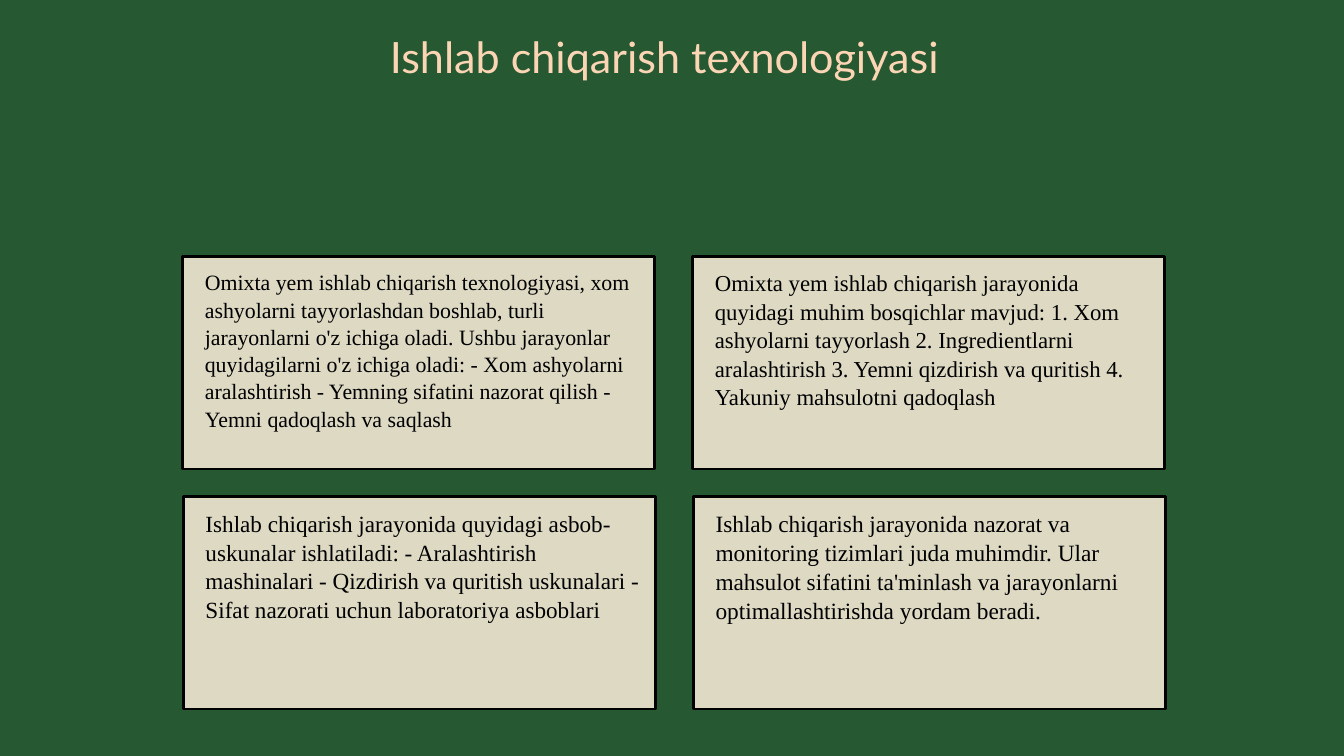
from pptx import Presentation
from pptx.dml.color import RGBColor
from pptx.enum.shapes import MSO_SHAPE
from pptx.enum.text import MSO_ANCHOR, PP_ALIGN
from pptx.util import Inches, Pt

RECTANGLE = MSO_SHAPE.RECTANGLE
TOP = MSO_ANCHOR.TOP
LEFT, CENTER = PP_ALIGN.LEFT, PP_ALIGN.CENTER

COLORS = {
    "background": "265832",
    "title": "FCD5B5",
    "card": "DDD9C3",
    "ink": "000000",
}
SLIDE_W, SLIDE_H = 20, 11.25
TITLE_BOX = (0.83, 0.4, 18, 2.19)
CARDS_BOX = (2.72, 3.82, 14.61, 6.73)
CARD_W, CARD_H = 7.02, 3.16
CARD_INSET = 0.12
TEXT_W, TEXT_H = 6.77, 2.87
ROW_SHIFT = 0.01
INDENT = 0.11

TITLE = "Ishlab chiqarish texnologiyasi"
CARDS = [
    [
        ("Omixta yem ishlab chiqarish texnologiyasi, xom ashyolarni tayyorlashdan "
         "boshlab, turli jarayonlarni o'z ichiga oladi. Ushbu jarayonlar "
         "quyidagilarni o'z ichiga oladi: - Xom ashyolarni aralashtirish - Yemning "
         "sifatini nazorat qilish - Yemni qadoqlash va saqlash", 23.4),
        ("Omixta yem ishlab chiqarish jarayonida quyidagi muhim bosqichlar mavjud: "
         "1. Xom ashyolarni tayyorlash 2. Ingredientlarni aralashtirish 3. Yemni "
         "qizdirish va quritish 4. Yakuniy mahsulotni qadoqlash", 24.4),
    ],
    [
        ("Ishlab chiqarish jarayonida quyidagi asbob-uskunalar ishlatiladi: "
         "- Aralashtirish mashinalari - Qizdirish va quritish uskunalari - Sifat "
         "nazorati uchun laboratoriya asboblari", 24.8),
        ("Ishlab chiqarish jarayonida nazorat va monitoring tizimlari juda "
         "muhimdir. Ular mahsulot sifatini ta'minlash va jarayonlarni "
         "optimallashtirishda yordam beradi.", 25),
    ],
]


def color(name):
    return RGBColor.from_string(COLORS[name])


def write(frame, text, font_name, size, ink, align, line_spacing):
    frame.word_wrap = True
    frame.vertical_anchor = TOP
    frame.text = text
    paragraph = frame.paragraphs[0]
    paragraph.alignment = align
    paragraph.line_spacing = line_spacing
    properties = paragraph._p.get_or_add_pPr()
    properties.set("marL", str(Inches(INDENT)))
    properties.set("indent", "0")
    font = paragraph.runs[0].font
    font.name = font_name
    font.size = Pt(size)
    font.color.rgb = color(ink)


def add_panel(slide, box, border=0):
    panel = slide.shapes.add_shape(RECTANGLE, *map(Inches, box))
    panel.shadow.inherit = False
    panel.fill.solid()
    panel.fill.fore_color.rgb = color("card")
    if border:
        panel.line.color.rgb = color("ink")
        panel.line.width = Pt(border)
    else:
        panel.line.fill.background()
    return panel


def add_title(slide, box):
    heading = slide.shapes.add_textbox(*map(Inches, box))
    write(heading.text_frame, TITLE, "Lato", 46.2, "title", CENTER, 1)


def add_card(slide, box, text, size):
    left, top, width, height = box
    add_panel(slide, box, border=3)
    body = add_panel(slide, (left + CARD_INSET, top + CARD_INSET, TEXT_W, TEXT_H))
    write(body.text_frame, text, "Times New Roman", size, "ink", LEFT, 1.04)


def add_cards(slide, box):
    left, top, width, height = box
    column_step = width - CARD_W
    row_step = height - CARD_H
    for row, cards in enumerate(CARDS):
        for column, (text, size) in enumerate(cards):
            x = left + column * column_step + row * ROW_SHIFT
            y = top + row * row_step
            add_card(slide, (x, y, CARD_W, CARD_H), text, size)


def main():
    deck = Presentation()
    deck.slide_width, deck.slide_height = Inches(SLIDE_W), Inches(SLIDE_H)
    slide = deck.slides.add_slide(deck.slide_layouts[6])
    slide.background.fill.solid()
    slide.background.fill.fore_color.rgb = color("background")
    add_title(slide, TITLE_BOX)
    add_cards(slide, CARDS_BOX)
    deck.save("out.pptx")


if __name__ == "__main__":
    main()
